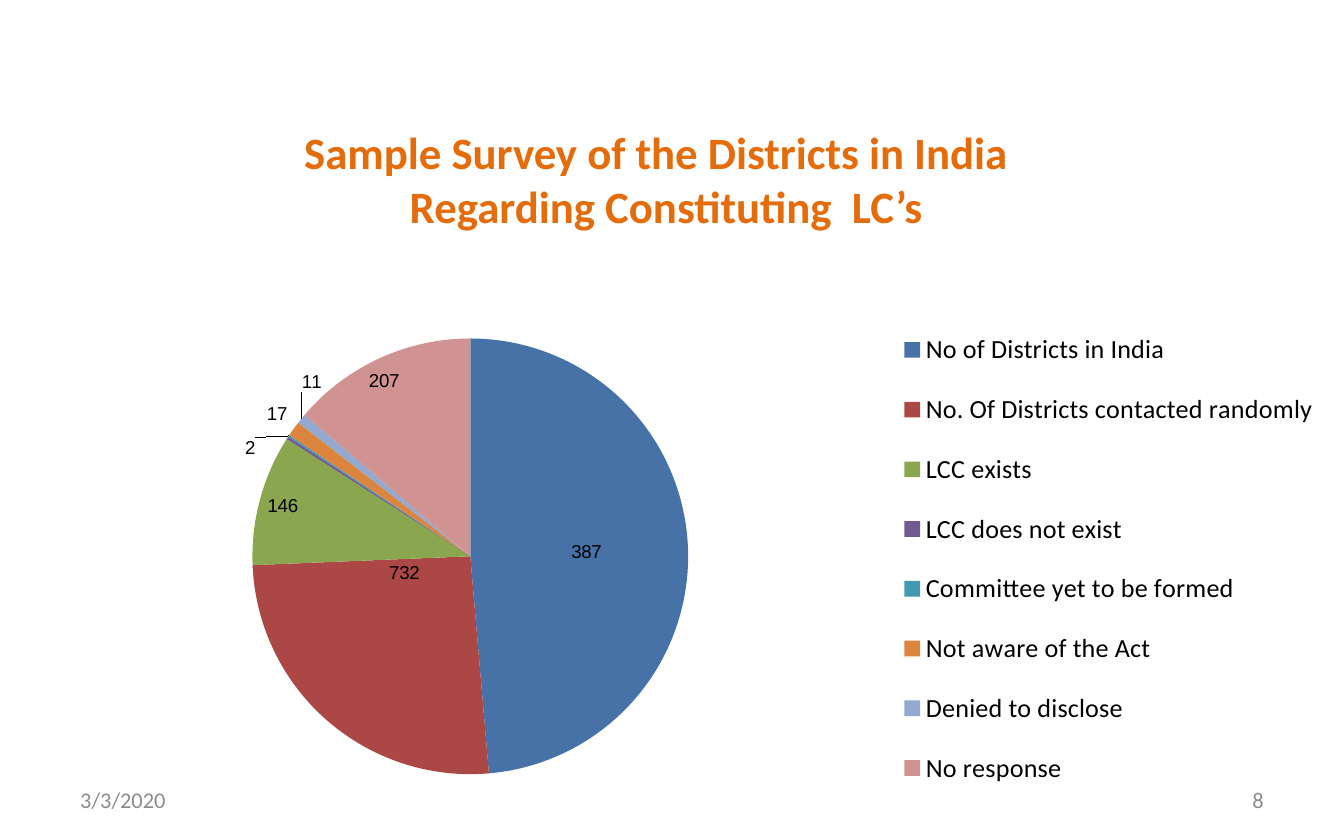
from lxml import etree
from pptx import Presentation
from pptx.chart.data import CategoryChartData
from pptx.dml.color import RGBColor
from pptx.enum.chart import XL_CHART_TYPE, XL_LABEL_POSITION, XL_LEGEND_POSITION
from pptx.enum.text import MSO_ANCHOR, PP_ALIGN
from pptx.oxml.ns import qn
from pptx.util import Emu, Pt

SLIDE_W, SLIDE_H = 1344, 840
EMU_PER_PX = 9144000 / SLIDE_W
FONT = "Calibri"
LABEL_FONT = "Arial"
COLORS = {"title": "E46C0A", "footer": "8C8C8C", "text": "000000"}

CENTER = XL_LABEL_POSITION.CENTER
INSIDE = XL_LABEL_POSITION.INSIDE_END
OUTSIDE = XL_LABEL_POSITION.OUTSIDE_END
LEFT, MIDDLE, RIGHT = PP_ALIGN.LEFT, PP_ALIGN.CENTER, PP_ALIGN.RIGHT

# category, value, slice colour, label position, label shift as a share of the chart
SLICES = [
    ("No of Districts in India", 732, "4672A8", CENTER, (-0.13, 0.04)),
    ("No. Of Districts contacted randomly", 387, "AB4744", CENTER, (0.14, -0.16)),
    ("LCC exists", 146, "8AA64F", INSIDE, (0, -0.01)),
    ("LCC does not exist", 3, "725990", None, None),
    ("Committee yet to be formed", 2, "4299B0", OUTSIDE, (-0.02, 0.05)),
    ("Not aware of the Act", 17, "DC853E", OUTSIDE, None),
    ("Denied to disclose", 11, "93A9CF", OUTSIDE, (0.02, -0.04)),
    ("No response", 207, "D19392", INSIDE, (-0.01, 0.01)),
]


def px(length):
    return Emu(round(length * EMU_PER_PX))


def style_font(font, size, color, name=FONT, bold=False):
    font.name = name
    font.size = Pt(size)
    font.bold = bold
    font.color.rgb = RGBColor.from_string(color)


def add_lines(slide, box, lines, size, color, align, anchor, bold=False):
    frame = slide.shapes.add_textbox(*map(px, box)).text_frame
    frame.word_wrap = True
    frame.vertical_anchor = anchor
    frame.text = "\n".join(lines)
    for paragraph in frame.paragraphs:
        paragraph.alignment = align
        style_font(paragraph.font, size, color, bold=bold)


def add_title(slide, box):
    lines = ["Sample Survey of the Districts in India ",
             " Regarding Constituting  LC’s"]
    add_lines(slide, box, lines, 24, COLORS["title"], MIDDLE, MSO_ANCHOR.TOP, bold=True)


def add_footer(slide, box):
    """Place the date at the left end of the box and the page number at the right."""
    left, top, width, height = box
    part_w = 313
    for text, x, align in (("3/3/2020", left, LEFT),
                           ("8", left + width - part_w, RIGHT)):
        add_lines(slide, (x, top, part_w, height), [text], 12,
                  COLORS["footer"], align, MSO_ANCHOR.MIDDLE)


def set_layout(predecessor, **settings):
    """Put a manual layout right after the given chart XML element."""
    layout = etree.Element(qn("c:layout"))
    manual = etree.SubElement(layout, qn("c:manualLayout"))
    for tag, value in settings.items():
        etree.SubElement(manual, qn(f"c:{tag}")).set("val", str(value))
    predecessor.addnext(layout)


def add_slice_labels(series):
    series.data_labels.show_value = False
    for index, (_, _, color, position, shift) in enumerate(SLICES):
        point = series.points[index]
        point.format.fill.solid()
        point.format.fill.fore_color.rgb = RGBColor.from_string(color)
        if position is None:
            continue
        label = point.data_label
        style_font(label.font, 10, COLORS["text"], LABEL_FONT)
        label.position = position
        if shift:
            idx = series._element.xpath(f"c:dLbls/c:dLbl/c:idx[@val='{index}']")[0]
            set_layout(idx, x=shift[0], y=shift[1])


def add_survey_pie(slide, box):
    survey = CategoryChartData()
    survey.categories = [row[0] for row in SLICES]
    survey.add_series("Series 1", [row[1] for row in SLICES])
    chart = slide.shapes.add_chart(XL_CHART_TYPE.PIE, *map(px, box), survey).chart
    chart.has_title = False
    style_font(chart.font, 18, COLORS["text"])
    chart.plots[0].vary_by_categories = True
    add_slice_labels(chart.plots[0].series[0])

    chart.has_legend = True
    legend = chart.legend
    legend.position = XL_LEGEND_POSITION.RIGHT
    legend.include_in_layout = False
    style_font(legend.font, 14, COLORS["text"])
    set_layout(legend._element.find(qn("c:legendPos")), xMode="edge", yMode="edge",
               x=0.66, y=0.06, w=0.33, h=0.94)

    plot_area = chart._chartSpace.chart.plotArea
    for layout in plot_area.findall(qn("c:layout")):
        plot_area.remove(layout)
    set_layout(plot_area[0], layoutTarget="inner", xMode="edge", yMode="edge",
               x=0.03, y=0.12, w=0.64, h=0.81)
    plot_area.insert(0, plot_area.find(qn("c:layout")))


def main():
    prs = Presentation()
    prs.slide_width, prs.slide_height = px(SLIDE_W), px(SLIDE_H)
    slide = prs.slides.add_slide(prs.slide_layouts[6])
    add_footer(slide, (67, 778, 1210, 44))
    add_title(slide, (101, 118, 1120, 134))
    add_survey_pie(slide, (0, 274, SLIDE_W, 538))
    prs.save("out.pptx")


if __name__ == "__main__":
    main()
